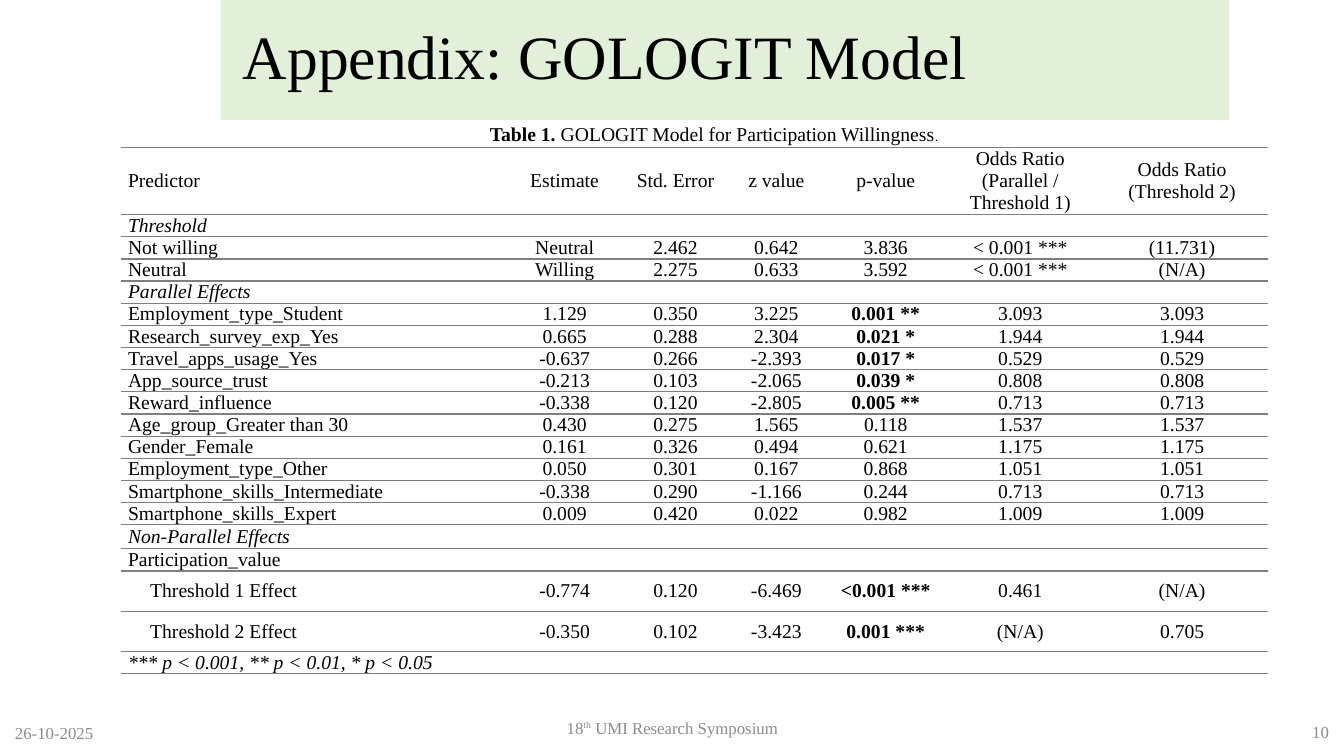
import pptx
import pptx.util
import pptx.dml.color
import pptx.enum.shapes
import pptx.enum.text
import pptx.oxml
import pptx.oxml.ns
from pptx.util import Inches

FONT = "Times New Roman"
BLACK, GREY, RULE, GREEN = "000000", "8C8C8C", "7F7F7F", "E2F0D9"
ALIGN = pptx.enum.text.PP_ALIGN
MIDDLE = pptx.enum.text.MSO_ANCHOR.MIDDLE

COLUMN_WIDTHS = [3.8, 1.2, 1, 1, 1.17, 1.5, 1.71]
P_VALUE_COLUMN = 4
# A row with one entry is a heading or note across the table
ROWS = [
    ["Predictor", "Estimate", "Std. Error", "z value", "p-value",
     "Odds Ratio (Parallel / Threshold 1)", "Odds Ratio (Threshold 2)"],
    ["Threshold"],
    ["Not willing", "Neutral", "2.462", "0.642", "3.836", "< 0.001 ***", "(11.731)"],
    ["Neutral", "Willing", "2.275", "0.633", "3.592", "< 0.001 ***", "(N/A)"],
    ["Parallel Effects"],
    ["Employment_type_Student", "1.129", "0.350", "3.225", "0.001 **", "3.093", "3.093"],
    ["Research_survey_exp_Yes", "0.665", "0.288", "2.304", "0.021 *", "1.944", "1.944"],
    ["Travel_apps_usage_Yes", "-0.637", "0.266", "-2.393", "0.017 *", "0.529", "0.529"],
    ["App_source_trust", "-0.213", "0.103", "-2.065", "0.039 *", "0.808", "0.808"],
    ["Reward_influence", "-0.338", "0.120", "-2.805", "0.005 **", "0.713", "0.713"],
    ["Age_group_Greater than 30", "0.430", "0.275", "1.565", "0.118", "1.537", "1.537"],
    ["Gender_Female", "0.161", "0.326", "0.494", "0.621", "1.175", "1.175"],
    ["Employment_type_Other", "0.050", "0.301", "0.167", "0.868", "1.051", "1.051"],
    ["Smartphone_skills_Intermediate", "-0.338", "0.290", "-1.166", "0.244", "0.713", "0.713"],
    ["Smartphone_skills_Expert", "0.009", "0.420", "0.022", "0.982", "1.009", "1.009"],
    ["Non-Parallel Effects"],
    ["Participation_value", "", "", "", "", "", ""],
    ["Threshold 1 Effect", "-0.774", "0.120", "-6.469", "<0.001 ***", "0.461", "(N/A)"],
    ["Threshold 2 Effect", "-0.350", "0.102", "-3.423", "0.001 ***", "(N/A)", "0.705"],
    ["*** p < 0.001, ** p < 0.01, * p < 0.05"],
]
ROW_HEIGHTS = [0.67] + [0.22] * 14 + [0.24, 0.22, 0.4, 0.4, 0.22]


def colour(value):
    return pptx.dml.color.RGBColor.from_string(value)


def style(font, size, value):
    font.name = FONT
    font.size = pptx.util.Pt(size)
    font.color.rgb = colour(value)


def indent_first_line(para):
    para._p.get_or_add_pPr().set("indent", str(Inches(0.22)))


def add_text(page, box, spans, size, value, align=ALIGN.LEFT):
    shape = page.shapes.add_textbox(*map(Inches, box))
    frame = shape.text_frame
    frame.word_wrap = True
    frame.vertical_anchor = MIDDLE
    para = frame.paragraphs[0]
    para.alignment = align
    for text in spans:
        para.add_run().text = text
    style(para.font, size, value)
    return frame


def add_title(page, box):
    shape = page.shapes.add_shape(pptx.enum.shapes.MSO_SHAPE.RECTANGLE, *map(Inches, box))
    shape.shadow.inherit = False
    shape.fill.solid()
    shape.fill.fore_color.rgb = colour(GREEN)
    shape.line.fill.background()
    shape.text_frame.vertical_anchor = MIDDLE
    para = shape.text_frame.paragraphs[0]
    para.text = " Appendix: GOLOGIT Model"
    para.alignment = ALIGN.LEFT
    para.line_spacing = 0.9
    style(para.font, 44, BLACK)


def rule_cell(cell):
    """Grey rules above and below, none at the sides."""
    properties = cell._tc.get_or_add_tcPr()
    namespace = pptx.oxml.ns.nsdecls("a")
    line = f'<a:solidFill><a:srgbClr val="{RULE}"/></a:solidFill>'
    sides = {"lnL": "<a:noFill/>", "lnR": "<a:noFill/>", "lnT": line, "lnB": line}
    for place, (side, fill) in enumerate(sides.items()):
        xml = f'<a:{side} {namespace} w="12700">{fill}</a:{side}>'
        properties.insert(place, pptx.oxml.parse_xml(xml))


def fill_cell(cell, text, column, spans_table):
    cell.fill.background()
    rule_cell(cell)
    cell.vertical_anchor = MIDDLE
    cell.margin_left = cell.margin_right = Inches(0.07)
    cell.margin_top = cell.margin_bottom = 0
    para = cell.text_frame.paragraphs[0]
    para.alignment = ALIGN.CENTER if column else ALIGN.LEFT
    if text.endswith("Effect"):
        indent_first_line(para)
    if text:
        para.text = text
    else:
        # Empty cells need the small size too, or their row grows
        namespace = pptx.oxml.ns.nsdecls("a")
        para._p.append(pptx.oxml.parse_xml(f'<a:endParaRPr {namespace} sz="1400"/>'))
    style(para.font, 14, BLACK)
    para.font.italic = spans_table
    para.font.bold = column == P_VALUE_COLUMN and text.endswith("*")


def add_model_table(page, left, top):
    count = len(COLUMN_WIDTHS)
    frame = page.shapes.add_table(len(ROWS), count, Inches(left), Inches(top),
                                  Inches(sum(COLUMN_WIDTHS)), Inches(sum(ROW_HEIGHTS)))
    table = frame.table
    table.first_row = table.horz_banding = False
    for column, width in zip(table.columns, COLUMN_WIDTHS):
        column.width = Inches(width)
    for index, (entries, height) in enumerate(zip(ROWS, ROW_HEIGHTS)):
        table.rows[index].height = Inches(height)
        spans_table = len(entries) == 1
        texts = entries + [""] * (count - len(entries))
        for column, text in enumerate(texts):
            fill_cell(table.cell(index, column), text, column, spans_table)
        if spans_table:
            table.cell(index, 0).merge(table.cell(index, count - 1))


def add_caption(page, box):
    spans = ["Table 1.", " GOLOGIT Model for Participation Willingness", "."]
    frame = add_text(page, box, spans, 14, BLACK)
    frame.word_wrap = False
    frame.auto_size = pptx.enum.text.MSO_AUTO_SIZE.SHAPE_TO_FIT_TEXT
    para = frame.paragraphs[0]
    indent_first_line(para)
    para.runs[0].font.bold = True
    para.runs[2].font.size = pptx.util.Pt(10)


def add_footer(page):
    add_text(page, (0.05, 7.02, 3.87, 0.49), ["26-10-2025"], 12, GREY)
    event = add_text(page, (3.92, 6.97, 5.5, 0.49), ["18", "th", " UMI Research Symposium"],
                     12, GREY, ALIGN.CENTER)
    para = event.paragraphs[0]
    para.space_after = pptx.util.Pt(6)
    para.runs[1].font._element.set("baseline", "30000")
    add_text(page, (10.28, 7.01, 3, 0.49), ["10"], 12, GREY, ALIGN.RIGHT)


def main():
    deck = pptx.Presentation()
    deck.slide_width, deck.slide_height = Inches(13.33), Inches(7.5)
    page = deck.slides.add_slide(deck.slide_layouts[6])
    add_title(page, (2.19, 0, 10, 1.19))
    add_model_table(page, 1.2, 1.46)
    add_caption(page, (4.54, 1.16, 4.9, 0.34))
    add_footer(page)
    deck.save("out.pptx")


if __name__ == "__main__":
    main()
